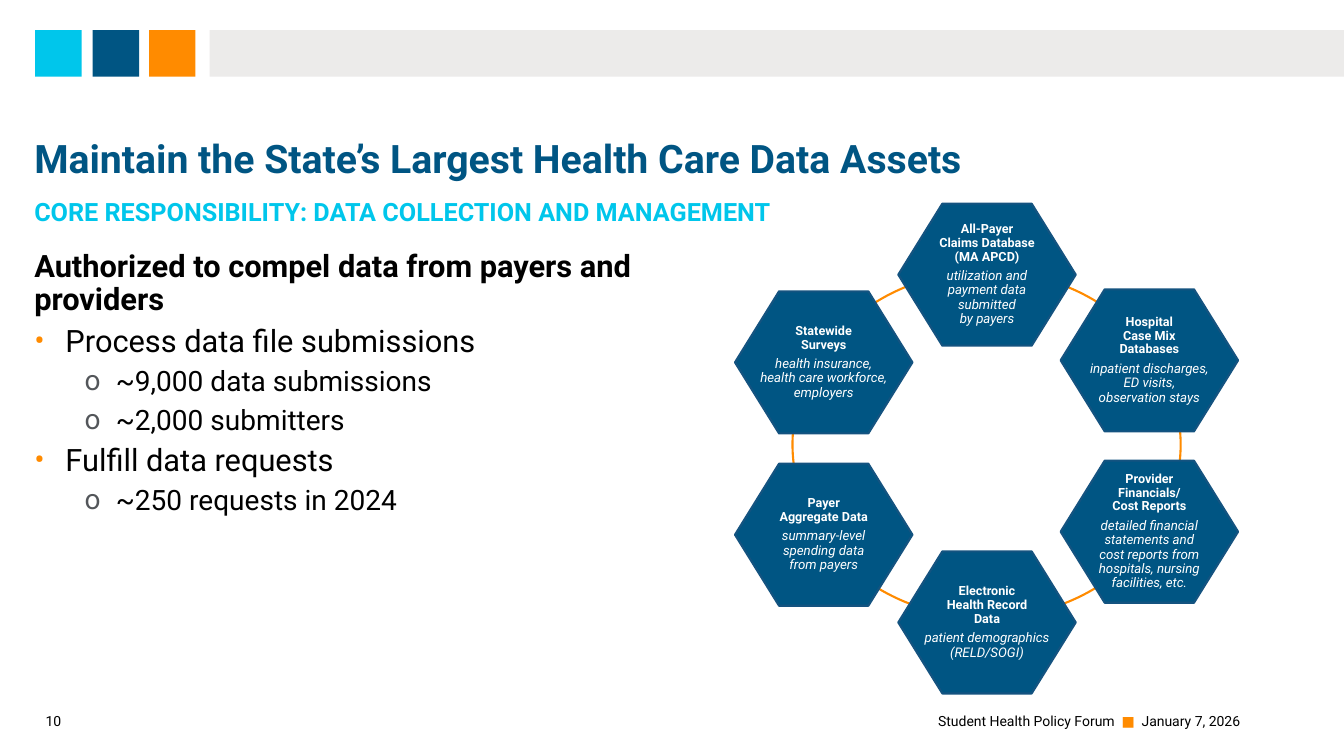
from lxml.etree import SubElement
from pptx import Presentation
from pptx.dml.color import RGBColor
from pptx.enum.shapes import MSO_SHAPE
from pptx.enum.text import MSO_ANCHOR, MSO_AUTO_SIZE, PP_ALIGN
from pptx.oxml.ns import qn
from pptx.util import Emu, Pt

EMU_PER_PX = 9144
FONT = "Roboto"
CYAN, NAVY, ORANGE = "00C6EB", "005583", "FF8B00"
NAVY_EDGE, BAND_GRAY, BULLET_GRAY = "145380", "ECEBEA", "53565A"
BLACK, WHITE = "000000", "FFFFFF"
HEX_WIDTH, HEX_HEIGHT = 176, 141

RESPONSIBILITIES = [
    (0, "Authorized to compel data from payers and providers"),
    (1, "Process data file submissions"),
    (2, "~9,000 data submissions"),
    (2, "~2,000 submitters"),
    (1, "Fulfill data requests"),
    (2, "~250 requests in 2024"),
]
OUTLINE_LEVELS = [
    (22, 0, 0, None, None),
    (22, 31, -31, "•", ORANGE),
    (20, 81, -31, "o", BULLET_GRAY),
]
DATA_ASSETS = [
    (891, 202, ["All-Payer", "Claims Database", "(MA APCD)"],
     ["utilization and", "payment data", "submitted", "by payers"]),
    (1052, 287, ["Hospital", "Case Mix", "Databases"],
     ["inpatient discharges,", "ED visits,", "observation stays"]),
    (1052, 457, ["Provider", "Financials/", "Cost Reports"],
     ["detailed financial", "statements and", "cost reports from",
      "hospitals, nursing", "facilities, etc."]),
    (891, 547, ["Electronic", "Health Record", "Data"],
     ["patient demographics", "(RELD/SOGI)"]),
    (729, 460, ["Payer", "Aggregate Data"],
     ["summary-level", "spending data", "from payers"]),
    (729, 289, ["Statewide", "Surveys"],
     ["health insurance,", "health care workforce,", "employers"]),
]


def px(length):
    return Emu(length * EMU_PER_PX)


def rgb(color):
    return RGBColor.from_string(color)


def add_run(paragraph, text, size, color, bold=False, italic=False):
    run = paragraph.add_run()
    run.text = text
    run.font.name = FONT
    run.font.size = Pt(size)
    run.font.color.rgb = rgb(color)
    run.font.bold = bold
    run.font.italic = italic


def set_frame(frame, anchor, wrap=True):
    frame.auto_size = MSO_AUTO_SIZE.NONE
    frame.word_wrap = wrap
    frame.vertical_anchor = anchor
    frame.margin_left = frame.margin_right = 0
    frame.margin_top = frame.margin_bottom = 0
    return frame


def add_text(slide, box, anchor=MSO_ANCHOR.MIDDLE):
    textbox = slide.shapes.add_textbox(*map(px, box))
    return set_frame(textbox.text_frame, anchor)


def add_figure(slide, preset, box, fill=None, edge=None):
    figure = slide.shapes.add_shape(preset, *map(px, box))
    figure.shadow.inherit = False
    if fill:
        figure.fill.solid()
        figure.fill.fore_color.rgb = rgb(fill)
    else:
        figure.fill.background()
    if edge:
        figure.line.color.rgb = rgb(edge)
        figure.line.width = Pt(1.5)
    else:
        figure.line.fill.background()
    return figure


def set_bullet(paragraph, indent, hanging, mark, color):
    properties = paragraph._p.get_or_add_pPr()
    properties.set("marL", str(px(indent)))
    properties.set("indent", str(px(hanging)))
    if mark:
        bullet_color = SubElement(properties, qn("a:buClr"))
        SubElement(bullet_color, qn("a:srgbClr"), val=color)
        SubElement(properties, qn("a:buFont"), typeface=FONT)
        SubElement(properties, qn("a:buChar"), char=mark)
    else:
        SubElement(properties, qn("a:buNone"))


def add_header(slide):
    add_figure(slide, MSO_SHAPE.RECTANGLE, (208, 30, 1125, 46), BAND_GRAY)
    for left, color in zip((35, 92, 148), (CYAN, NAVY, ORANGE)):
        add_figure(slide, MSO_SHAPE.RECTANGLE, (left, 30, 46, 46), color)


def add_headings(slide):
    title = slide.shapes.title
    title.left, title.top, title.width, title.height = map(px, (34, 78, 1194, 103))
    heading = set_frame(title.text_frame, MSO_ANCHOR.BOTTOM).paragraphs[0]
    heading.alignment = PP_ALIGN.LEFT
    heading.line_spacing = 0.9
    add_run(heading, "Maintain the State’s Largest Health Care Data Assets",
            28, NAVY, bold=True)
    subtitle = add_text(slide, (34, 189, 1194, 46)).paragraphs[0]
    subtitle.line_spacing = 0.9
    add_run(subtitle, "CORE RESPONSIBILITY: DATA COLLECTION AND MANAGEMENT",
            18, CYAN, bold=True)


def add_responsibilities(slide):
    frame = add_text(slide, (34, 249, 633, 434), MSO_ANCHOR.TOP)
    for index, (level, text) in enumerate(RESPONSIBILITIES):
        paragraph = frame.add_paragraph() if index else frame.paragraphs[0]
        size, *bullet = OUTLINE_LEVELS[level]
        set_bullet(paragraph, *bullet)
        paragraph.line_spacing = 0.9
        if index:
            paragraph.space_before = Pt(6)
        add_run(paragraph, text, size, BLACK, bold=level == 0)


def add_centered_lines(paragraph, lines, size, bold=False, italic=False):
    paragraph.alignment = PP_ALIGN.CENTER
    paragraph.line_spacing = 0.9
    paragraph.space_after = Pt(3.8)
    for index, line in enumerate(lines):
        if index:
            paragraph.add_line_break()
        add_run(paragraph, line, size, WHITE, bold, italic)


def add_data_asset(slide, left, top, name, details):
    hexagon = add_figure(slide, MSO_SHAPE.HEXAGON,
                         (left, top, HEX_WIDTH, HEX_HEIGHT), NAVY, NAVY_EDGE)
    hexagon.adjustments[0] = 0.31
    frame = set_frame(hexagon.text_frame, MSO_ANCHOR.MIDDLE, wrap=False)
    add_centered_lines(frame.paragraphs[0], name, 9, bold=True)
    add_centered_lines(frame.add_paragraph(), details, 9.5, italic=True)


def add_footer(slide):
    page = add_text(slide, (31, 702, 44, 27)).paragraphs[0]
    page.alignment = PP_ALIGN.CENTER
    add_run(page, "10", 10, BLACK)
    event = add_text(slide, (92, 695, 1138, 40)).paragraphs[0]
    event.alignment = PP_ALIGN.RIGHT
    add_run(event, "Student Health Policy Forum  ", 10, BLACK)
    add_run(event, "■  ", 10, ORANGE)
    add_run(event, "January 7, 2026", 10, BLACK)


def main():
    presentation = Presentation()
    presentation.slide_width, presentation.slide_height = px(1333), px(750)
    slide = presentation.slides.add_slide(presentation.slide_layouts[5])
    add_header(slide)
    add_headings(slide)
    add_responsibilities(slide)
    add_figure(slide, MSO_SHAPE.OVAL, (786, 269, 385, 344), edge=ORANGE)
    for asset in DATA_ASSETS:
        add_data_asset(slide, *asset)
    add_footer(slide)
    presentation.save("out.pptx")


if __name__ == "__main__":
    main()
